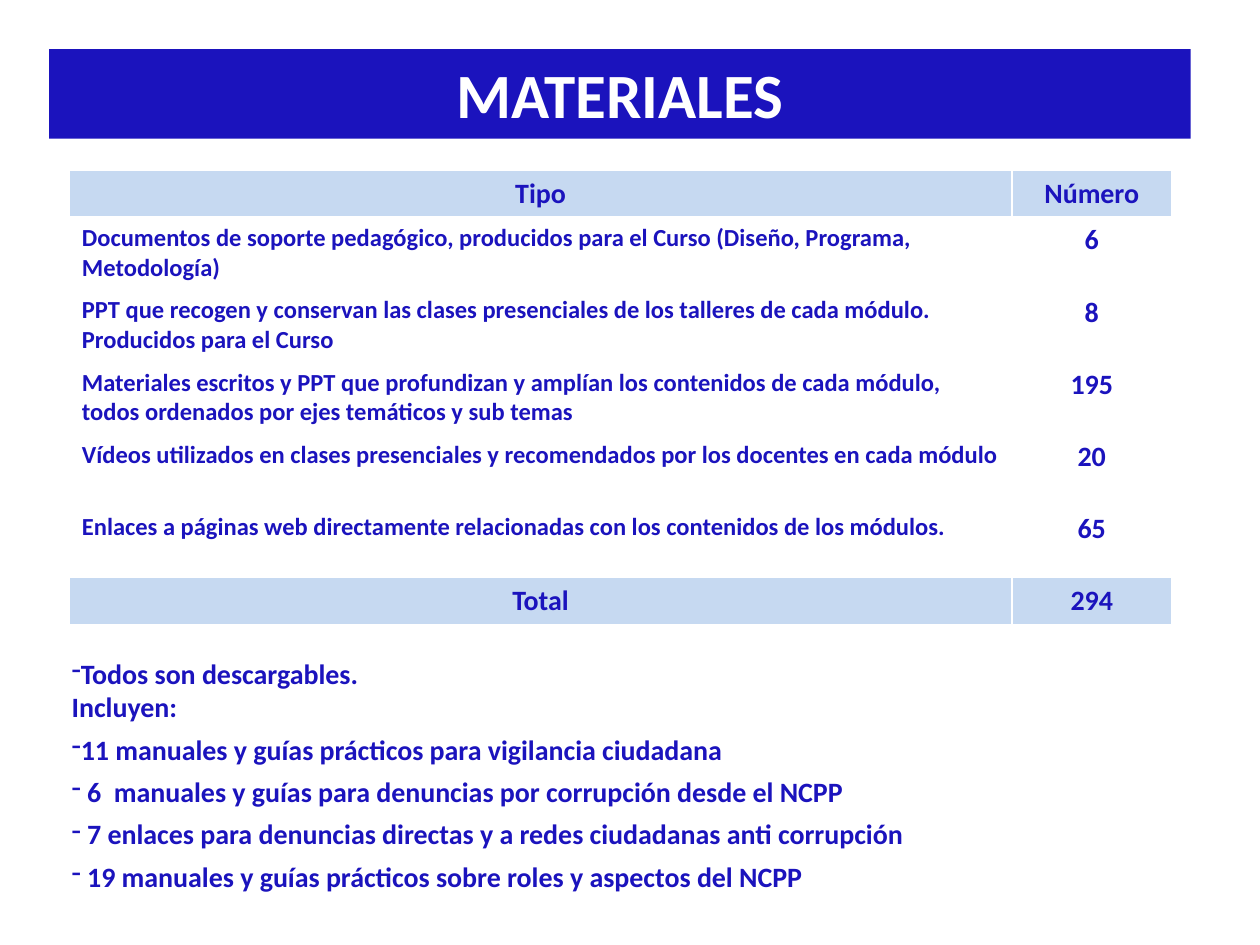
from lxml.etree import SubElement
from pptx import Presentation
from pptx.dml.color import RGBColor
from pptx.enum.shapes import MSO_SHAPE
from pptx.enum.text import MSO_ANCHOR, PP_ALIGN
from pptx.oxml.ns import qn
from pptx.util import Inches, Pt

BLUE = RGBColor(0x1B, 0x13, 0xBD)
PALE_BLUE = RGBColor(0xC6, 0xD9, 0xF1)
WHITE = RGBColor(0xFF, 0xFF, 0xFF)
FONT = "Calibri"

COLUMN_WIDTHS = [7.48, 1.27]
EDGE_ROW_HEIGHT = 0.36
BODY_ROW_HEIGHT = 0.57
MATERIALS = [
    ("Tipo", "Número"),
    ("Documentos de soporte pedagógico, producidos para el Curso "
     "(Diseño, Programa, Metodología)", "6"),
    ("PPT que recogen y conservan las clases presenciales de los talleres "
     "de cada módulo. Producidos para el Curso", "8"),
    ("Materiales escritos y PPT que profundizan y amplían los contenidos "
     "de cada módulo, todos ordenados por ejes temáticos y sub temas", "195"),
    ("Vídeos utilizados en clases presenciales y recomendados por los "
     "docentes en cada módulo", "20"),
    ("Enlaces a páginas web directamente relacionadas con los contenidos "
     "de los módulos.", "65"),
    ("Total", "294"),
]
NOTES = [
    ("Todos son descargables.", True, 0),
    ("Incluyen:", False, 0),
    ("11 manuales y guías prácticos para vigilancia ciudadana", True, 5),
    (" 6  manuales y guías para denuncias por corrupción desde el NCPP", True, 5),
    (" 7 enlaces para denuncias directas y a redes ciudadanas anti corrupción", True, 5),
    (" 19 manuales y guías prácticos sobre roles y aspectos del NCPP", True, 5),
]


def write(p, text, size, color=BLUE, align=PP_ALIGN.LEFT):
    p.text = text
    p.alignment = align
    for r in p.runs:
        r.font.name = FONT
        r.font.size = Pt(size)
        r.font.bold = True
        r.font.color.rgb = color


def add_dash(p):
    bullet = SubElement(p._p.get_or_add_pPr(), qn("a:buChar"))
    bullet.set("char", "-")


def add_title(s, text):
    sp = s.shapes.add_shape(MSO_SHAPE.RECTANGLE, Inches(0.39), Inches(0.39),
                            Inches(9.06), Inches(0.71))
    sp.shadow.inherit = False
    sp.fill.solid()
    sp.fill.fore_color.rgb = BLUE
    sp.line.fill.background()
    tf = sp.text_frame
    tf.vertical_anchor = MSO_ANCHOR.TOP
    write(tf.paragraphs[0], text, 36, WHITE, PP_ALIGN.CENTER)


def add_materials_table(s):
    last = len(MATERIALS) - 1
    heights = [EDGE_ROW_HEIGHT if i in (0, last) else BODY_ROW_HEIGHT
               for i in range(len(MATERIALS))]
    table = s.shapes.add_table(
        len(MATERIALS), len(COLUMN_WIDTHS), Inches(0.55), Inches(1.35),
        Inches(sum(COLUMN_WIDTHS)), Inches(sum(heights))).table
    for column, width in zip(table.columns, COLUMN_WIDTHS):
        column.width = Inches(width)
    for i, (values, height) in enumerate(zip(MATERIALS, heights)):
        table.rows[i].height = Inches(height)
        is_edge = i in (0, last)
        for j, value in enumerate(values):
            cell = table.cell(i, j)
            cell.fill.solid()
            cell.fill.fore_color.rgb = PALE_BLUE if is_edge else WHITE
            is_large = is_edge or j == 1
            write(cell.text_frame.paragraphs[0], value, 16 if is_large else 14,
                  align=PP_ALIGN.CENTER if is_large else PP_ALIGN.LEFT)


def add_notes_list(s):
    box = s.shapes.add_textbox(Inches(0.47), Inches(5.16), Inches(8.91), Inches(1.99))
    tf = box.text_frame
    tf.word_wrap = True
    for i, (text, dashed, gap) in enumerate(NOTES):
        p = tf.add_paragraph() if i else tf.paragraphs[0]
        write(p, text, 16)
        p.space_before = Pt(gap)
        if dashed:
            add_dash(p)


def main():
    prs = Presentation()
    prs.slide_width = Inches(10)
    prs.slide_height = Inches(7.5)
    s = prs.slides.add_slide(prs.slide_layouts[6])
    add_title(s, "MATERIALES")
    add_materials_table(s)
    add_notes_list(s)
    prs.save("out.pptx")


if __name__ == "__main__":
    main()
